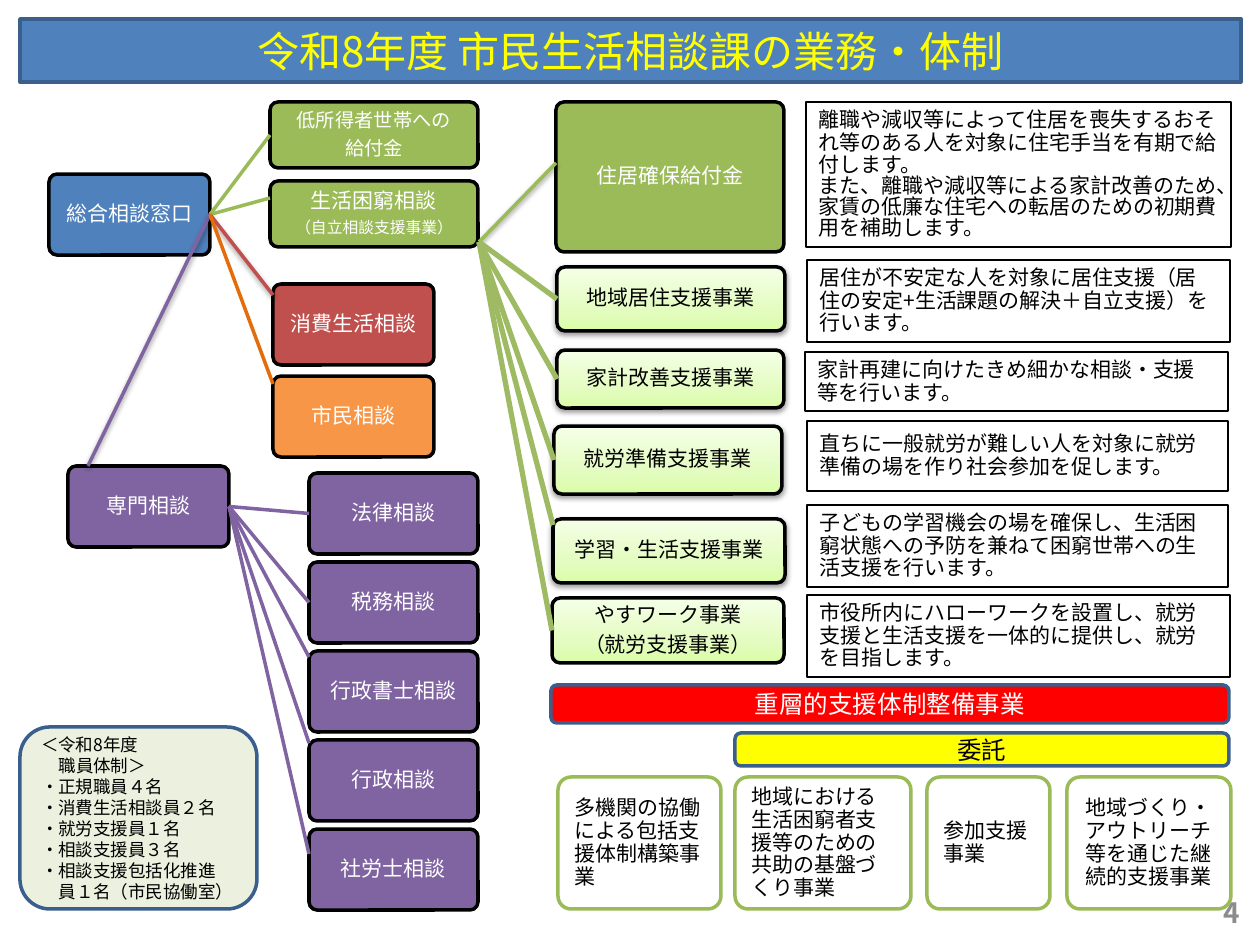
from dataclasses import dataclass

from lxml import etree
from pptx import Presentation
from pptx import util as u
from pptx.dml.color import RGBColor
from pptx.enum import shapes, text
from pptx.oxml import parse_xml
from pptx.oxml.ns import nsdecls, qn

RIGHT, LEFT = 3, 1  # connection sites


@dataclass(frozen=True)
class Theme:
    font: str = "Noto Sans CJK JP"
    black: str = "000000"
    white: str = "FFFFFF"
    blue: str = "4F81BD"
    blue_edge: str = "3A5F8C"
    green: str = "9BBB59"
    fan_green: str = "9EBB63"
    red: str = "C0504D"
    orange: str = "F79646"
    orange_line: str = "E46C0A"
    purple: str = "8064A2"
    yellow: str = "FFFF00"
    alert: str = "FF0000"
    staff: str = "EBF1DE"
    grey: str = "8C8C8C"
    pale: tuple = ((0, "DAFDA7"), (35, "E4FCC2"), (100, "F5FFE7"))
    title_size: int = 24
    page_size: int = 16
    bar_size: int = 14
    body: int = 12
    small: int = 11
    staff_size: int = 10
    note: int = 9


THEME = Theme()


def px(length):
    return u.Emu(round(length * 914400 / 126))


def add_shadow(shape):
    shape._element.spPr.append(parse_xml(
        f'<a:effectLst {nsdecls("a")}><a:outerShdw blurRad="39370" dist="20320" dir="5400000">'
        f'<a:srgbClr val="{THEME.black}"><a:alpha val="38000"/></a:srgbClr>'
        '</a:outerShdw></a:effectLst>'))


def paint(shape, fill):
    """Fill with nothing, one colour, or a list of upward gradient stops."""
    if fill is None:
        shape.fill.background()
    elif isinstance(fill, str):
        shape.fill.solid()
        shape.fill.fore_color.rgb = RGBColor.from_string(fill)
    else:
        stops = "".join(f'<a:gs pos="{position * 1000}"><a:srgbClr val="{color}"/></a:gs>'
                        for position, color in fill)
        shape._element.spPr.find(qn("a:prstGeom")).addnext(parse_xml(
            f'<a:gradFill {nsdecls("a")}><a:gsLst>{stops}</a:gsLst>'
            '<a:lin ang="16200000" scaled="0"/></a:gradFill>'))


def write(shape, lines, size, color, align="CENTER", spacing=None, after=0, inset=None, bold=None):
    """Write lines; each is a string or a dict with its own text, size, spacing or indent."""
    frame = shape.text_frame
    frame.word_wrap = True
    frame.vertical_anchor = text.MSO_ANCHOR.MIDDLE
    if inset is not None:
        frame.margin_left = frame.margin_right = px(inset)
        frame.margin_top = frame.margin_bottom = px(inset)
    for index, line in enumerate(lines):
        line = {"text": line} if isinstance(line, str) else line
        paragraph = frame.paragraphs[0] if index == 0 else frame.add_paragraph()
        paragraph.text = line["text"]
        paragraph.alignment = getattr(text.PP_ALIGN, align)
        paragraph.line_spacing = line.get("spacing", spacing)
        paragraph.space_after = u.Pt(after)
        if "indent" in line:
            paragraph._p.get_or_add_pPr().set("marL", str(u.Pt(line["indent"])))
        font = paragraph.font
        font.size = u.Pt(line.get("size", size))
        font.bold = bold
        font.color.rgb = RGBColor.from_string(color)
        font.name = THEME.font
        etree.SubElement(font._rPr, qn("a:ea"), typeface=THEME.font)


def add_panel(slide, bounds, fill, edge, width=2, radius=None):
    """Rectangle, rounded when a corner radius in px is given."""
    kind = shapes.MSO_SHAPE.RECTANGLE if radius is None else shapes.MSO_SHAPE.ROUNDED_RECTANGLE
    shape = slide.shapes.add_shape(kind, *map(px, bounds))
    if radius is not None:
        shape.adjustments[0] = radius / min(bounds[2:])
    shape.shadow.inherit = False
    paint(shape, fill)
    shape.line.color.rgb = RGBColor.from_string(edge)
    shape.line.width = u.Pt(width)
    return shape


def add_node(slide, bounds, lines, fill, color=THEME.white, size=THEME.body, shadow=False):
    shape = add_panel(slide, bounds, fill, THEME.black, radius=8)
    if shadow:
        shape._element.spPr.remove(shape._element.spPr.find(qn("a:effectLst")))
        add_shadow(shape)
    write(shape, lines, size, color, spacing=0.9, after=4, inset=4)
    return shape


def add_link(slide, start, end, color, width=2, shadow=False):
    """Line from a box's right side or a point to a box's left side or a point."""
    first, last = [(0, 0) if hasattr(stop, "shape_id") else stop for stop in (start, end)]
    line = slide.shapes.add_connector(shapes.MSO_CONNECTOR.STRAIGHT, *map(px, (*first, *last)))
    if start is not first:
        line.begin_connect(start, RIGHT)
    if end is not last:
        line.end_connect(end, LEFT)
    line.line.color.rgb = RGBColor.from_string(color)
    line.line.width = u.Pt(width)
    if shadow:
        add_shadow(line)
    else:
        etree.SubElement(line._element.spPr, qn("a:effectLst"))


def add_consultations(slide):
    """Left half: the desk, its kinds of consultation and the specialists."""
    desk = add_node(slide, (49, 174, 161, 81), ["総合相談窓口"], THEME.blue)
    benefit = add_node(slide, (270, 102, 208, 66), ["低所得者世帯への", "給付金"],
                       THEME.green, size=THEME.small)
    add_node(slide, (270, 181, 208, 66),
             ["生活困窮相談", {"text": "（自立相談支援事業）", "size": THEME.note}], THEME.green)
    add_node(slide, (273, 284, 161, 81), ["消費生活相談"], THEME.red)
    add_node(slide, (273, 376, 161, 81), ["市民相談"], THEME.orange)
    expert = add_node(slide, (68, 466, 161, 81), ["専門相談"], THEME.purple)
    names = ["法律相談", "税務相談", "行政書士相談", "行政相談", "社労士相談"]
    experts = [add_node(slide, (309, 473 + 89 * row, 169, 81), [name], THEME.purple)
               for row, name in enumerate(names)]

    add_link(slide, desk, (88, 466), THEME.purple, shadow=True)
    add_link(slide, desk, benefit, THEME.green)
    add_link(slide, desk, (270, 198), THEME.green)
    add_link(slide, desk, (273, 295), THEME.red, shadow=True)
    add_link(slide, desk, (273, 384), THEME.orange_line)
    for end in (*experts[:2], (309, 657), (309, 743), (309, 854)):
        add_link(slide, expert, end, THEME.purple)


def add_programs(slide):
    """Middle column: support programs fanning out of one corner."""
    fan = (479, 242)
    add_node(slide, (556, 102, 228, 150), ["住居確保給付金"], THEME.green)
    add_link(slide, fan, (556, 163), THEME.green, shadow=True)
    programs = [
        ((557, 267, 228, 64), ["地域居住支援事業"], True, None),
        ((557, 350, 227, 58), ["家計改善支援事業"], True, None),
        ((554, 426, 228, 68), ["就労準備支援事業"], True, None),
        ((553, 519, 232, 64), ["学習・生活支援事業"], True, (553, 525)),
        ((552, 598, 232, 65), ["やすワーク事業", "（就労支援事業）"], False, None),
    ]
    for bounds, lines, shadow, end in programs:
        node = add_node(slide, bounds, lines, THEME.pale, THEME.black, shadow=shadow)
        add_link(slide, fan, end or node, THEME.fan_green, 3)


def add_descriptions(slide):
    """Right column: what each program does."""
    descriptions = [
        ((806, 102, 425, 145),
         ["離職や減収等によって住居を喪失するおそれ等のある人を対象に住宅手当を有期で給付します。",
          {"text": "また、離職や減収等による家計改善のため、家賃の低廉な住宅への転居のための初期費用を補助します。",
           "spacing": u.Pt(12)}]),
        ((807, 260, 423, 82),
         ["居住が不安定な人を対象に居住支援（居住の安定+生活課題の解決＋自立支援）を行います。"]),
        ((805, 352, 423, 59), ["家計再建に向けたきめ細かな相談・支援等を行います。"]),
        ((807, 421, 421, 70), ["直ちに一般就労が難しい人を対象に就労準備の場を作り社会参加を促します。"]),
        ((807, 505, 421, 82),
         ["子どもの学習機会の場を確保し、生活困窮状態への予防を兼ねて困窮世帯への生活支援を行います。"]),
        ((807, 595, 423, 82),
         ["市役所内にハローワークを設置し、就労支援と生活支援を一体的に提供し、就労を目指します。"]),
    ]
    for bounds, lines in descriptions:
        panel = add_panel(slide, bounds, None, THEME.black, 0.75)
        write(panel, lines, THEME.body, THEME.black, "LEFT", u.Pt(13))


def add_layered_support(slide):
    """Lower right: two bars over four cards."""
    bars = [((551, 685, 678, 38), "重層的支援体制整備事業", THEME.alert, THEME.white),
            ((735, 733, 494, 33), "委託", THEME.yellow, THEME.black)]
    for bounds, label, fill, color in bars:
        write(add_panel(slide, bounds, fill, THEME.blue_edge, radius=6),
              [label], THEME.bar_size, color)
    cards = [(558, 163, "多機関の協働による包括支援体制構築事業", "LEFT"),
             (735, 176, "地域における生活困窮者支援等のための共助の基盤づくり事業", "LEFT"),
             (927, 123, "参加支援事業", "LEFT"),
             (1067, 164, "地域づくり・アウトリーチ等を通じた継続的支援事業", "CENTER")]
    for left, width, label, align in cards:
        card = add_panel(slide, (left, 777, width, 132), THEME.white, THEME.green, radius=13)
        write(card, [label], THEME.body, THEME.black, align, u.Pt(13))


def add_staff(slide):
    lines = ["＜令和8年度", {"text": "職員体制＞", "indent": 10}, "・正規職員４名",
             "・消費生活相談員２名", "・就労支援員１名", "・相談支援員３名",
             "・相談支援包括化推進", {"text": "員１名（市民協働室）", "indent": 10}]
    panel = add_panel(slide, (20, 727, 237, 182), THEME.staff, THEME.blue_edge, radius=30)
    write(panel, lines, THEME.staff_size, THEME.black, "LEFT", u.Pt(12))


def main():
    presentation = Presentation()
    presentation.slide_width, presentation.slide_height = px(1260), px(945)
    slide = presentation.slides.add_slide(presentation.slide_layouts[6])

    # Title band
    title = add_panel(slide, (20, 19, 1221, 63), THEME.blue, THEME.blue_edge)
    write(title, ["令和8年度 市民生活相談課の業務・体制"], THEME.title_size, THEME.yellow)

    add_consultations(slide)
    add_programs(slide)
    add_descriptions(slide)
    add_layered_support(slide)
    add_staff(slide)

    # Page number
    number = slide.shapes.add_textbox(*map(px, (948, 887, 304, 50)))
    write(number, ["4"], THEME.page_size, THEME.grey, "RIGHT", bold=True)

    presentation.save("out.pptx")


if __name__ == "__main__":
    main()
